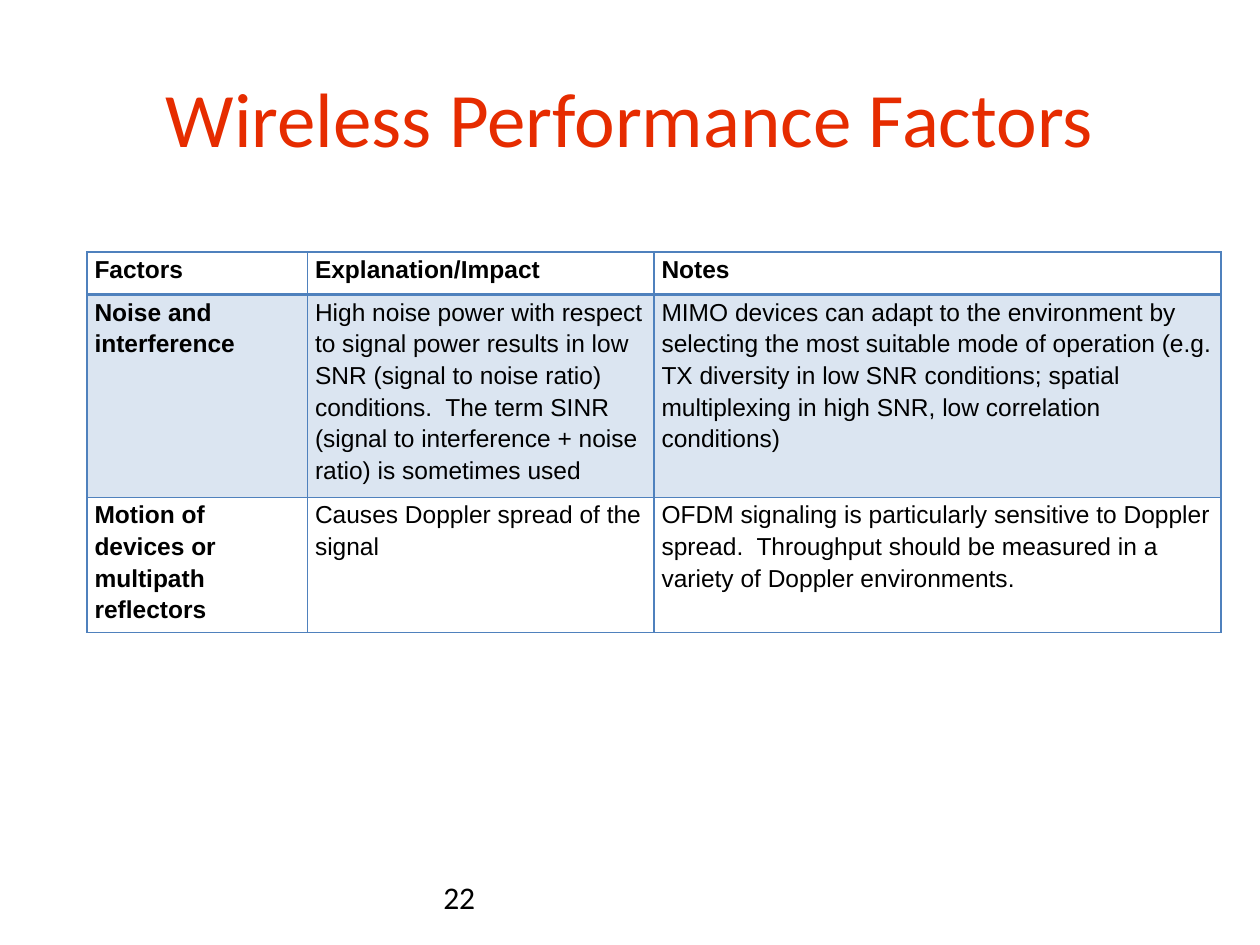
from lxml.etree import SubElement
from pptx import Presentation
from pptx.dml.color import RGBColor
from pptx.enum.text import MSO_ANCHOR as Anchor, PP_ALIGN as Align
from pptx.oxml.ns import qn
from pptx.util import Inches, Pt

RED = RGBColor(0xE6, 0x2C, 0x00)
BLACK = RGBColor(0x00, 0x00, 0x00)
BLUE = RGBColor(0x4F, 0x81, 0xBD)

TITLE_FONT = {"name": "Calibri", "size": Pt(44), "bold": False}
NUMBER_FONT = {"name": "Calibri", "size": Pt(18), "bold": False}
CELL_FONT = {"name": "Arial", "size": Pt(14)}
CELL_MARGINS = {"margin_left": Inches(0.06), "margin_right": Inches(0.06),
                "margin_top": 0, "margin_bottom": 0}


def write(para, text, font_format, color):
    span = para.add_run()
    span.text = text
    for name, value in font_format.items():
        setattr(span.font, name, value)
    span.font.color.rgb = color


def add_borders(cell, widths):
    """Put side borders ahead of the cell fill, as the schema requires."""
    props = cell._tc.get_or_add_tcPr()
    for index, (side, width) in enumerate(widths.items()):
        line = SubElement(props, qn(f"a:{side}"), w=str(Pt(width)))
        fill = SubElement(line, qn("a:solidFill"))
        SubElement(fill, qn("a:srgbClr"), val=str(BLUE))
        props.insert(index, line)


deck = Presentation()
deck.slide_width, deck.slide_height = Inches(10), Inches(7.5)
page = deck.slides.add_slide(deck.slide_layouts[5])

# Title
title = page.shapes.title
title.left, title.top = Inches(0.5), Inches(0.3)
title.width, title.height = Inches(9), Inches(1.25)
title.text_frame.vertical_anchor = Anchor.MIDDLE
para = title.text_frame.paragraphs[0]
para.alignment = Align.CENTER
write(para, "Wireless Performance Factors", TITLE_FONT, RED)

# Page number
box = page.shapes.add_textbox(Inches(3.42), Inches(6.92), Inches(2.33), Inches(0.4))
box.text_frame.word_wrap = True
write(box.text_frame.paragraphs[0], "22", NUMBER_FONT, BLACK)

# Factors table
ROWS = [
    ("Factors", "Explanation/Impact", "Notes"),
    ("Noise and interference",
     "High noise power with respect to signal power results in low SNR "
     "(signal to noise ratio) conditions.  The term SINR (signal to "
     "interference + noise ratio) is sometimes used",
     "MIMO devices can adapt to the environment by selecting the most suitable "
     "mode of operation (e.g. TX diversity in low SNR conditions; spatial "
     "multiplexing in high SNR, low correlation conditions)"),
    ("Motion of devices or multipath reflectors",
     "Causes Doppler spread of the signal",
     "OFDM signaling is particularly sensitive to Doppler spread.  Throughput "
     "should be measured in a variety of Doppler environments."),
]
COLUMN_WIDTHS = [1.75, 2.75, 4.5]
ROW_HEIGHTS = [0.34, 1.11, 0.63]

table = page.shapes.add_table(len(ROWS), len(COLUMN_WIDTHS), Inches(0.69), Inches(2),
                              Inches(sum(COLUMN_WIDTHS)), Inches(sum(ROW_HEIGHTS))).table
table.horz_banding = False
for column, width in zip(table.columns, COLUMN_WIDTHS):
    column.width = Inches(width)
for row, height in zip(table.rows, ROW_HEIGHTS):
    row.height = Inches(height)

for row_index, texts in enumerate(ROWS):
    for column_index, text in enumerate(texts):
        cell = table.cell(row_index, column_index)
        for name, value in CELL_MARGINS.items():
            setattr(cell, name, value)

        # The first body row has a pale tint
        if row_index == 1:
            cell.fill.solid()
            cell.fill.fore_color.rgb = BLUE
            tint = cell._tc.tcPr.find(f"{qn('a:solidFill')}/{qn('a:srgbClr')}")
            SubElement(tint, qn("a:alpha"), val="20000")
        else:
            cell.fill.background()

        # A heavier line divides the header from the body
        add_borders(cell, {"lnL": 1, "lnR": 1,
                           "lnT": 2 if row_index == 1 else 1,
                           "lnB": 2 if row_index == 0 else 1})

        para = cell.text_frame.paragraphs[0]
        para.line_spacing = 1.15
        is_heading = row_index == 0 or column_index == 0
        write(para, text, {**CELL_FONT, "bold": is_heading}, BLACK)

deck.save("out.pptx")
